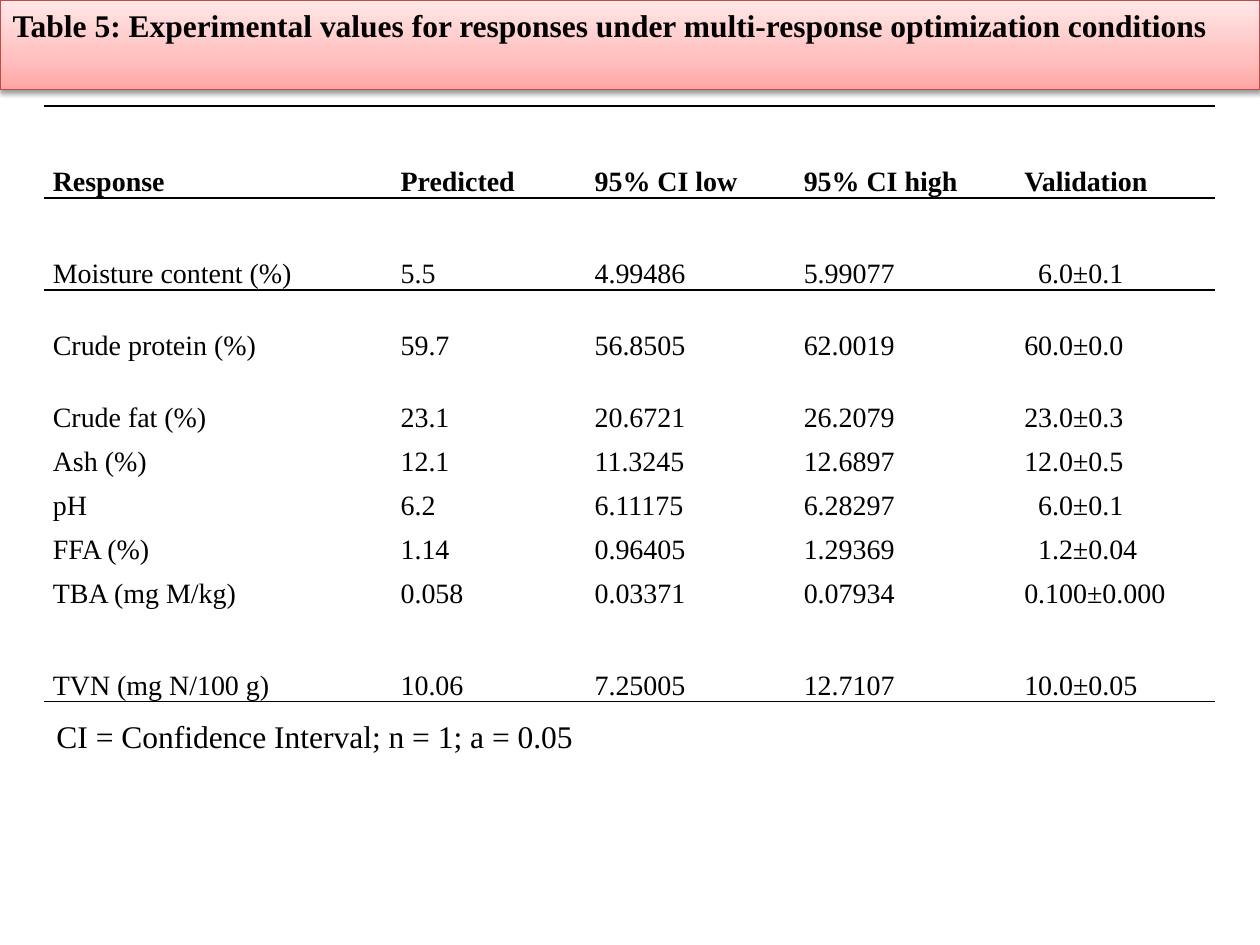
from copy import deepcopy
from dataclasses import dataclass

from lxml import etree
from pptx import Presentation
from pptx.dml.color import RGBColor
from pptx.enum import text
from pptx.oxml import parse_xml
from pptx.oxml.ns import nsdecls, qn
from pptx.util import Inches, Pt

COLORS = {"ink": "000000", "paper": "FFFFFF", "edge": "BF4C48",
          "deep": "FFA6A5", "mid": "FFC0BF", "pale": "FFE7E7"}
FONT = "Times New Roman"
NO_STYLE = "{2D5ABB26-0587-4C30-8999-92F81FD0307C}"
COLUMN_WIDTHS = (2.76, 1.54, 1.66, 1.75, 1.58)
HEADINGS = ("Response", "Predicted", "95% CI low", "95% CI high", "Validation")
TALL, MEDIUM, SHORT = 0.73, 0.57, 0.35
VALIDATION_INDENT = 0.11


@dataclass
class Row:
    cells: tuple[str, ...]
    height: float
    indented: bool = False
    bold: bool = False
    rules: tuple[str, ...] = ()


ROWS = [
    Row(HEADINGS, TALL, bold=True, rules=("T", "B")),
    Row(("Moisture content (%)", "5.5", "4.99486", "5.99077", "6.0±0.1"), TALL, True, rules=("T",)),
    Row(("Crude protein (%)", "59.7", "56.8505", "62.0019", "60.0±0.0"), MEDIUM),
    Row(("Crude fat (%)", "23.1", "20.6721", "26.2079", "23.0±0.3"), MEDIUM),
    Row(("Ash (%)", "12.1", "11.3245", "12.6897", "12.0±0.5"), SHORT),
    Row(("pH", "6.2", "6.11175", "6.28297", "6.0±0.1"), SHORT, True),
    Row(("FFA (%)", "1.14", "0.96405", "1.29369", "1.2±0.04"), SHORT, True),
    Row(("TBA (mg M/kg)", "0.058", "0.03371", "0.07934", "0.100±0.000"), SHORT),
    Row(("TVN (mg N/100 g)", "10.06", "7.25005", "12.7107", "10.0±0.05"), TALL, rules=("B",)),
]


def rgb(name: str) -> RGBColor:
    return RGBColor.from_string(COLORS[name])


def set_attrs(obj, values: dict) -> None:
    for name, value in values.items():
        setattr(obj, name, value)


def write(p, words: str, size: float, bold: bool = False) -> None:
    r = p.add_run()
    r.text = words
    set_attrs(r.font, {"name": FONT, "size": Pt(size), "bold": bold})
    r.font.color.rgb = rgb("ink")


def add_rules(cell, sides: tuple[str, ...]) -> None:
    """Draw 1 pt borders on the given sides, T or B."""
    tc_pr = cell._tc.get_or_add_tcPr()
    for i, side in enumerate(sides):
        tc_pr.insert(i, parse_xml(
            f'<a:ln{side} {nsdecls("a")} w="12700"><a:solidFill>'
            f'<a:srgbClr val="{COLORS["ink"]}"/></a:solidFill></a:ln{side}>'))


def fill_gradient(sp, stops: list[tuple[float, str]]) -> None:
    sp.fill.gradient()
    sp.fill.gradient_angle = 90
    gs_list = sp._element.spPr.find(qn("a:gradFill")).find(qn("a:gsLst"))
    while len(gs_list) < len(stops):
        gs_list.append(deepcopy(gs_list[0]))
    for stop, (position, color) in zip(sp.fill.gradient_stops, stops):
        stop.position = position
        stop.color.rgb = rgb(color)


def add_shadow(sp) -> None:
    sp.shadow.inherit = False
    effects = sp._element.spPr.find(qn("a:effectLst"))
    shadow = etree.SubElement(effects, qn("a:outerShdw"), blurRad="40000",
                              dist="20000", dir="5400000", rotWithShape="0")
    color = etree.SubElement(shadow, qn("a:srgbClr"), val=COLORS["ink"])
    etree.SubElement(color, qn("a:alpha"), val="38000")


def format_title(sp) -> None:
    set_attrs(sp, {"left": 0, "top": 0, "width": Inches(10), "height": Inches(0.71)})
    fill_gradient(sp, [(0, "deep"), (0.35, "mid"), (1, "pale")])
    sp.line.color.rgb = rgb("edge")
    sp.line.width = Pt(0.75)
    add_shadow(sp)
    tf = sp.text_frame
    set_attrs(tf, {"vertical_anchor": text.MSO_ANCHOR.TOP, "word_wrap": True,
                   "auto_size": text.MSO_AUTO_SIZE.NONE})
    p = tf.paragraphs[0]
    p.alignment = text.PP_ALIGN.LEFT
    write(p, "Table 5: Experimental values for responses under "
             "multi-response optimization conditions", 18, True)


def add_response_table(s) -> None:
    frame = s.shapes.add_table(len(ROWS), len(HEADINGS), Inches(0.35), Inches(0.84),
                               Inches(sum(COLUMN_WIDTHS)),
                               Inches(sum(row.height for row in ROWS)))
    table = frame.table
    set_attrs(table, {"first_row": False, "horz_banding": False})
    table._tbl.tblPr.find(qn("a:tableStyleId")).text = NO_STYLE
    for column, width in zip(table.columns, COLUMN_WIDTHS):
        column.width = Inches(width)
    for i, row in enumerate(ROWS):
        table.rows[i].height = Inches(row.height)
        for j, words in enumerate(row.cells):
            cell = table.cell(i, j)
            set_attrs(cell, {"margin_left": Inches(0.07), "margin_right": Inches(0.07),
                             "margin_top": 0, "margin_bottom": 0,
                             "vertical_anchor": text.MSO_ANCHOR.BOTTOM})
            cell.fill.solid()
            cell.fill.fore_color.rgb = rgb("paper")
            add_rules(cell, row.rules)
            p = cell.text_frame.paragraphs[0]
            set_attrs(p, {"alignment": text.PP_ALIGN.JUSTIFY, "line_spacing": 1.15})
            if row.indented and j == len(HEADINGS) - 1:
                p._p.get_or_add_pPr().set("marL", str(Inches(VALIDATION_INDENT)))
            write(p, words, 16, row.bold)


def add_footnote(s) -> None:
    sp = s.shapes.add_textbox(Inches(0.35), Inches(5.64), Inches(4.34), Inches(0.71))
    sp.text_frame.word_wrap = False
    write(sp.text_frame.paragraphs[0], "CI = Confidence Interval; n = 1; a = 0.05", 18)


def main() -> None:
    prs = Presentation()
    set_attrs(prs, {"slide_width": Inches(10), "slide_height": Inches(7.5)})
    s = prs.slides.add_slide(prs.slide_layouts[5])
    format_title(s.shapes.title)
    add_response_table(s)
    add_footnote(s)
    prs.save("out.pptx")


if __name__ == "__main__":
    main()
